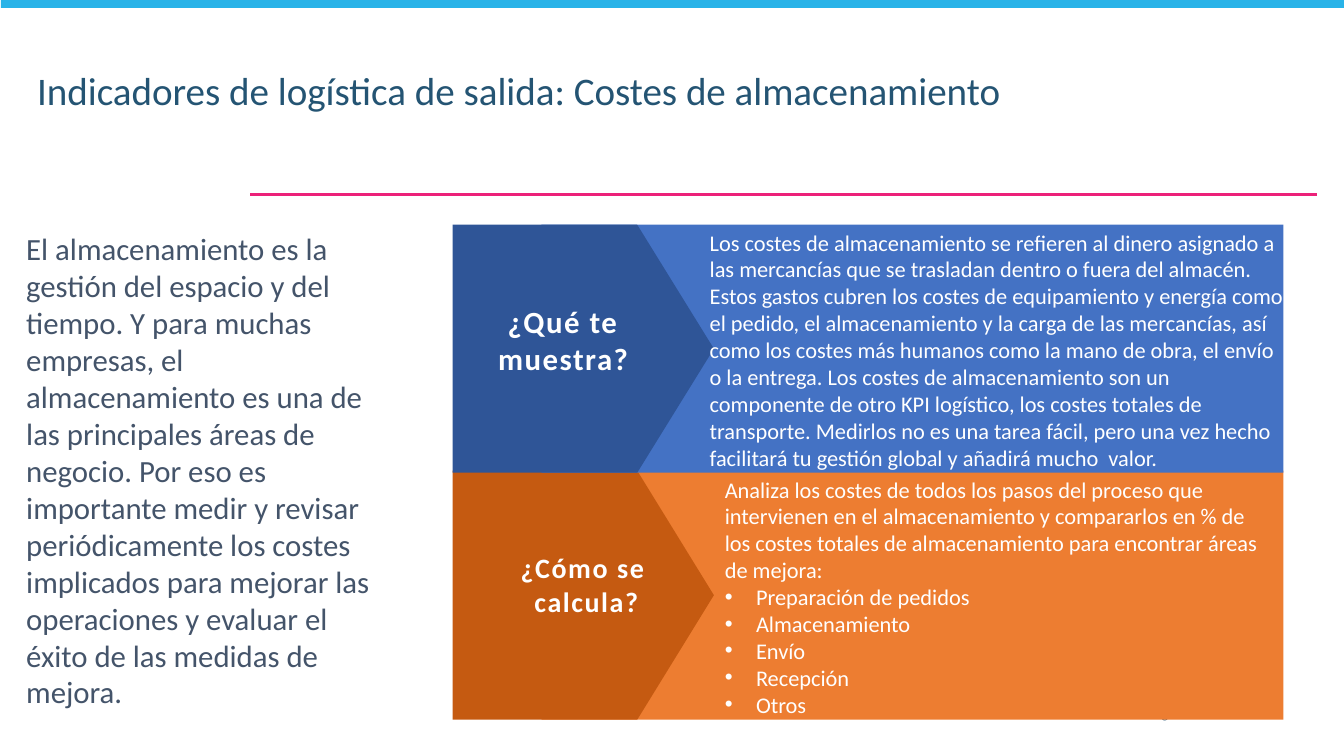
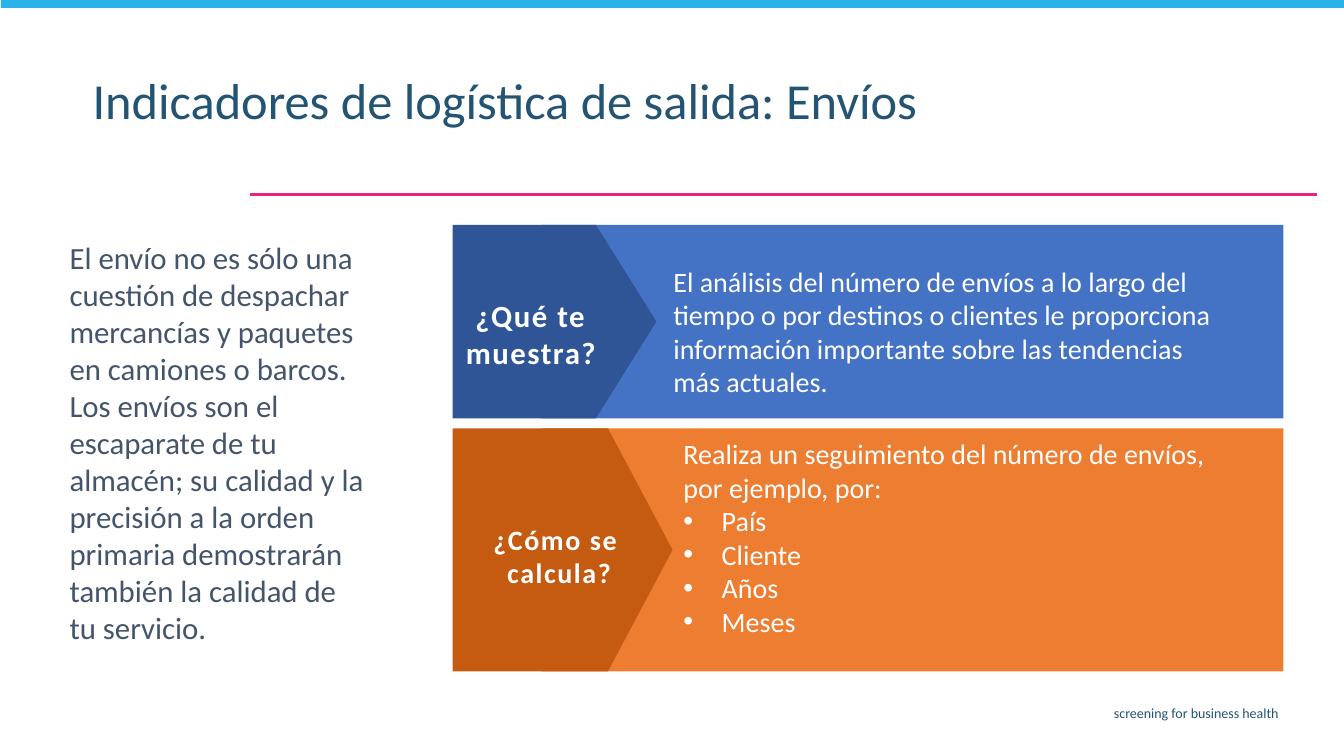
"""Build two slides on outbound logistics indicators: storage costs and shipments."""
from lxml import etree
from pptx import Presentation
from pptx.dml.color import RGBColor
from pptx.enum import shapes, text
from pptx.oxml.ns import qn
from pptx.util import Inches, Pt

COLORS = {
    "bar": "29B3E8", "rule": "EC2179", "title": "245473", "intro": "44546A", "white": "FFFFFF",
    "blue": "4472C4", "navy": "2F5597", "orange": "ED7D31", "rust": "C55A11",
}
FONT = "Calibri"
PANEL_LEFT, BAND_LEFT, NOTCH, PANEL_RIGHT = 4.49, 5.37, 6.16, 12.73
LABEL = {"bold": True, "margins": (0, 0), "anchor": text.MSO_ANCHOR.MIDDLE,
         "align": text.PP_ALIGN.CENTER, "spacing": 110}

SLIDES = [
    {
        "title": ("Indicadores de logística de salida: Costes de almacenamiento",
                  (0.27, 0.74, 9.94, 0.76), 27.9, 0.7),
        "intro": ("El almacenamiento es la gestión del espacio y del tiempo. Y para muchas empresas, "
                  "el almacenamiento es una de las principales áreas de negocio. Por eso es importante "
                  "medir y revisar periódicamente los costes implicados para mejorar las operaciones y "
                  "evaluar el éxito de las medidas de mejora.", (0.17, 2.24, 3.69, 4.9)),
        "size": 16,
        "indent": 0.31,
        "panels": [
            {"top": 4.67, "height": 2.47, "shoulder": 6.32, "tip": 7.08, "fills": ("orange", "rust"),
             "label": (["¿Cómo se ", "calcula?"], (4.69, 5.46, 2.25, 0.67), 20),
             "box": (7.09, 4.67, 5.62, 2.52),
             "body": "Analiza los costes de todos los pasos del proceso que intervienen en el "
                     "almacenamiento y compararlos en % de los costes totales de almacenamiento para "
                     "encontrar áreas de mejora:",
             "bullets": ["Preparación de pedidos", "Almacenamiento", "Envío", "Recepción", "Otros"]},
            {"top": 2.23, "height": 2.46, "shoulder": 6.32, "tip": 7.08, "fills": ("blue", "navy"),
             "label": (["¿Qué te muestra?"], (4.49, 3, 2.19, 0.74), 22),
             "box": (6.94, 2.22, 5.92, 2.52),
             "body": "Los costes de almacenamiento se refieren al dinero asignado a las mercancías que "
                     "se trasladan dentro o fuera del almacén. Estos gastos cubren los costes de "
                     "equipamiento y energía como el pedido, el almacenamiento y la carga de las "
                     "mercancías, así como los costes más humanos como la mano de obra, el envío o la "
                     "entrega. Los costes de almacenamiento son un componente de otro KPI logístico, "
                     "los costes totales de transporte. Medirlos no es una tarea fácil, pero una vez "
                     "hecho facilitará tu gestión global y añadirá mucho  valor.",
             "bullets": []},
        ],
    },
    {
        "title": ("Indicadores de logística de salida: Envíos", (0.82, 0.7, 9.94, 0.76), 36, 0.9),
        "intro": ("El envío no es sólo una cuestión de despachar mercancías y paquetes en camiones o "
                  "barcos. Los envíos son el escaparate de tu almacén; su calidad y la precisión a la "
                  "orden primaria demostrarán también la calidad de tu servicio.",
                  (0.6, 2.33, 3.11, 4.16)),
        "size": 20,
        "indent": 0.38,
        "panels": [
            {"top": 4.25, "height": 2.41, "shoulder": 6.03, "tip": 6.67, "fills": ("orange", "rust"),
             "label": (["¿Cómo se ", "calcula?"], (4.42, 5.18, 2.25, 0.67), 20),
             "box": (6.68, 4.28, 5.62, 2.39),
             "body": "Realiza un seguimiento del número de envíos, por ejemplo, por:",
             "bullets": ["País", "Cliente", "Años", "Meses"]},
            {"top": 2.23, "height": 1.92, "shoulder": 5.91, "tip": 6.51, "fills": ("blue", "navy"),
             "label": (["¿Qué te muestra?"], (4.17, 2.94, 2.19, 0.74), 22),
             "box": (6.58, 2.57, 5.65, 1.45),
             "body": "El análisis del número de envíos a lo largo del tiempo o por destinos o clientes "
                     "le proporciona información importante sobre las tendencias más actuales.",
             "bullets": []},
        ],
    },
]


def add_text(s, box, lines, size, color, bullets=(), indent=0, bold=False, margins=(0.1, 0.05),
             anchor=text.MSO_ANCHOR.TOP, align=text.PP_ALIGN.LEFT, spacing=0, leading=None,
             fit=text.MSO_AUTO_SIZE.SHAPE_TO_FIT_TEXT):
    tf = s.shapes.add_textbox(*map(Inches, box)).text_frame
    side, edge = map(Inches, margins)
    frame = {"word_wrap": True, "auto_size": fit, "vertical_anchor": anchor, "margin_left": side,
             "margin_right": side, "margin_top": edge, "margin_bottom": edge}
    for name, value in frame.items():
        setattr(tf, name, value)
    for i, line in enumerate([*lines, *bullets]):
        p = tf.add_paragraph() if i else tf.paragraphs[0]
        if i >= len(lines):
            pPr = p._p.get_or_add_pPr()
            pPr.set("marL", str(Inches(indent)))
            pPr.set("indent", str(-Inches(indent)))
            etree.SubElement(pPr, qn("a:buFont")).set("typeface", "Arial")
            etree.SubElement(pPr, qn("a:buChar")).set("char", "•")
        p.alignment = align
        if leading:
            p.line_spacing = leading
        r = p.add_run()
        r.text = line
        for name, value in {"name": FONT, "size": Pt(size), "bold": bold}.items():
            setattr(r.font, name, value)
        r.font.color.rgb = RGBColor.from_string(COLORS[color])
        if spacing:
            r.font._element.set("spc", str(spacing))


def paint(sp, color):
    sp.shadow.inherit = False
    sp.fill.solid()
    sp.fill.fore_color.rgb = RGBColor.from_string(COLORS[color])
    sp.line.fill.background()


prs = Presentation()
prs.slide_width, prs.slide_height = Inches(13.33), Inches(7.5)

for page in SLIDES:
    s = prs.slides.add_slide(prs.slide_layouts[6])

    rule = s.shapes.add_connector(shapes.MSO_CONNECTOR.STRAIGHT,
                                  *map(Inches, (13.06, 1.93, 2.48, 1.93)))
    rule.line.color.rgb = RGBColor.from_string(COLORS["rule"])
    rule.line.width = Pt(1.5)
    etree.SubElement(rule._element.spPr, qn("a:effectLst"))
    bar = s.shapes.add_shape(shapes.MSO_SHAPE.RECTANGLE, *map(Inches, (0.01, -0.02, 13.34, 0.1)))
    paint(bar, "bar")
    add_text(s, (3.65, 6.94, 9.13, 0.29), ["screening for business health"], 10, "title",
             align=text.PP_ALIGN.RIGHT, fit=text.MSO_AUTO_SIZE.NONE)

    title, box, size, leading = page["title"]
    add_text(s, box, [title], size, "title", leading=leading, fit=text.MSO_AUTO_SIZE.NONE)
    intro, box = page["intro"]
    add_text(s, box, [intro], 22, "intro", margins=(0.09, 0.04))

    for panel in page["panels"]:
        top, bottom = panel["top"], panel["top"] + panel["height"]
        middle = (top + bottom) / 2
        shoulder, tip = panel["shoulder"], panel["tip"]
        band = [(BAND_LEFT, top), (NOTCH, middle), (BAND_LEFT, bottom),
                (PANEL_RIGHT, bottom), (PANEL_RIGHT, top)]
        arrow = [(shoulder, bottom), (PANEL_LEFT, bottom), (PANEL_LEFT, top),
                 (shoulder, top), (tip, middle)]
        for outline, fill in zip((band, arrow), panel["fills"]):
            points = [(Inches(x), Inches(y)) for x, y in outline]
            fb = s.shapes.build_freeform(*points[0])
            fb.add_line_segments(points[1:], close=True)
            paint(fb.convert_to_shape(), fill)

    for panel in page["panels"]:
        add_text(s, panel["box"], [panel["body"]], page["size"], "white",
                 bullets=panel["bullets"], indent=page["indent"])
        label, box, size = panel["label"]
        add_text(s, box, label, size, "white", **LABEL)

prs.save("out.pptx")
